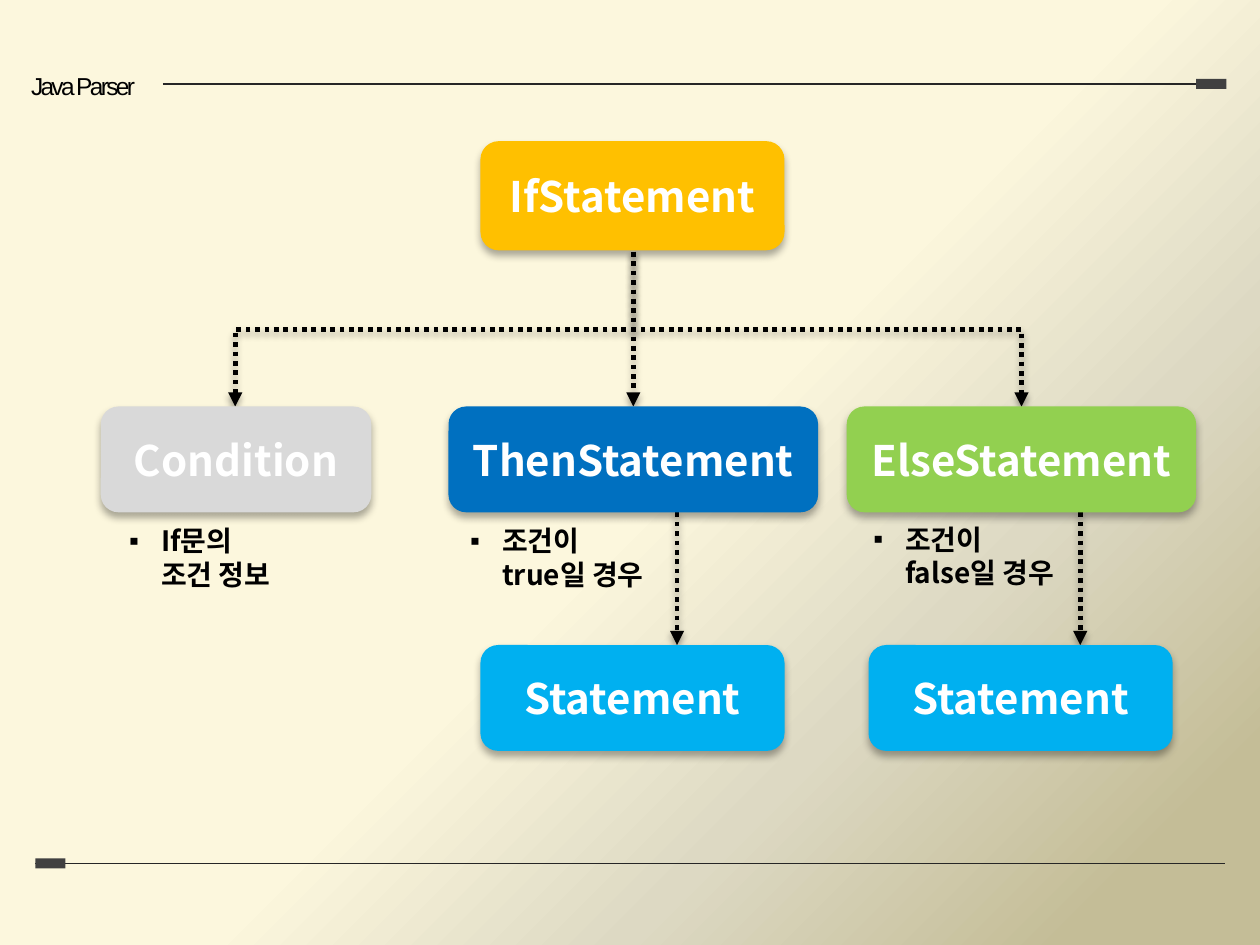
from dataclasses import dataclass

from lxml import etree
from pptx import Presentation
from pptx.dml.color import RGBColor
from pptx.enum.dml import MSO_LINE
from pptx.enum.shapes import MSO_CONNECTOR, MSO_SHAPE
from pptx.enum.text import MSO_ANCHOR, PP_ALIGN
from pptx.oxml import parse_xml
from pptx.oxml.ns import nsdecls, qn
from pptx.util import Inches, Pt

STRAIGHT, ELBOW = MSO_CONNECTOR.STRAIGHT, MSO_CONNECTOR.ELBOW
RECTANGLE, ROUNDED = MSO_SHAPE.RECTANGLE, MSO_SHAPE.ROUNDED_RECTANGLE
CENTER, MIDDLE, TOP = PP_ALIGN.CENTER, MSO_ANCHOR.MIDDLE, MSO_ANCHOR.TOP
DOTTED = MSO_LINE.ROUND_DOT


@dataclass(frozen=True)
class Theme:
    title_font: str = "Arial"
    body_font: str = "Noto Sans CJK KR"
    title_size: float = 10.5
    node_size: int = 18
    note_size: int = 12
    black: str = "000000"
    white: str = "FFFFFF"
    rule: str = "262626"
    tab: str = "404040"
    root: str = "FFC000"
    condition: str = "D9D9D9"
    then: str = "0070C0"
    otherwise: str = "92D050"
    statement: str = "00B0F0"
    backdrop: tuple = ((52, "FCF7DD"), (71, "DDD9C3"), (91, "C4BD97"))


THEME = Theme()


def style_run(run, font, size, color, bold=True):
    run.font.name = font
    run.font.size = Pt(size)
    run.font.bold = bold
    run.font.color.rgb = RGBColor.from_string(color)
    etree.SubElement(run.font._element, qn("a:ea"), typeface=font)


def add_drop_shadow(shape, opacity, blur, distance):
    """Give a shape or connector a black shadow straight below; lengths in points."""
    shape._element.spPr.append(parse_xml(
        f'<a:effectLst {nsdecls("a")}><a:outerShdw blurRad="{Pt(blur)}" dist="{Pt(distance)}" '
        f'dir="5400000" rotWithShape="0"><a:srgbClr val="{THEME.black}">'
        f'<a:alpha val="{opacity * 1000}"/></a:srgbClr></a:outerShdw></a:effectLst>'))


prs = Presentation()
prs.slide_width, prs.slide_height = Inches(7.5), Inches(7.5 * 3 / 4)
slide = prs.slides.add_slide(prs.slide_layouts[5])

# Background gradient, light at the top left corner
slide.background.fill.solid()
plain_fill = next(slide.element.iter(qn("a:solidFill")))
stops = "".join(f'<a:gs pos="{place * 1000}"><a:srgbClr val="{color}"/></a:gs>'
                for place, color in THEME.backdrop)
plain_fill.getparent().replace(plain_fill, parse_xml(
    f'<a:gradFill {nsdecls("a")} rotWithShape="1"><a:gsLst>{stops}</a:gsLst>'
    '<a:path path="circle"><a:fillToRect r="100000" b="100000"/></a:path></a:gradFill>'))

# Header and footer rules, each with a small tab at one end
for rule_left, rule_y, tab_left in ((0.21, 5.14, 0.21), (0.97, 0.5, 7.12)):
    rule = slide.shapes.add_connector(
        STRAIGHT, Inches(rule_left), Inches(rule_y), Inches(7.29), Inches(rule_y))
    rule.line.color.rgb = RGBColor.from_string(THEME.rule)
    rule.line.width = Pt(0.75)
    etree.SubElement(rule._element.spPr, qn("a:effectLst"))
    tab = slide.shapes.add_shape(
        RECTANGLE, Inches(tab_left), Inches(rule_y - 0.03), Inches(0.18), Inches(0.06))
    tab.shadow.inherit = False
    tab.fill.solid()
    tab.fill.fore_color.rgb = RGBColor.from_string(THEME.tab)
    tab.line.fill.background()

title = slide.shapes.title
title.left, title.top, title.width, title.height = (
    Inches(0.03), Inches(0.37), Inches(0.93), Inches(0.28))
title.text_frame.word_wrap = False
title.text_frame.vertical_anchor = TOP
heading = title.text_frame.paragraphs[0]
heading.alignment = CENTER
heading_run = heading.add_run()
heading_run.text = "Java Parser"
style_run(heading_run, THEME.title_font, THEME.title_size, THEME.black, bold=False)
heading_run.font._element.set("spc", "-110")

# Arrows: from x, from y, to x, to y
ROOT_X, ROOT_BOTTOM = 3.77, 1.5
BRANCH_TOP, BRANCH_BOTTOM, LEAF_TOP = 2.42, 3.05, 3.84
arrows = [(ROOT_X, ROOT_BOTTOM, x, BRANCH_TOP) for x in (1.4, ROOT_X, 6.08)]
arrows += [(x, BRANCH_BOTTOM, x, LEAF_TOP) for x in (4.03, 6.43)]
for x1, y1, x2, y2 in arrows:
    if x1 == x2:
        arrow = slide.shapes.add_connector(
            STRAIGHT, Inches(x1), Inches(y1), Inches(x2), Inches(y2))
    else:
        # An elbow leaves sideways, so lay it down and turn it about its centre
        center_x, center_y = (x1 + x2) / 2, (y1 + y2) / 2
        half_run, half_rise = (y2 - y1) / 2, abs(x2 - x1) / 2
        side = 1 if x2 > x1 else -1
        arrow = slide.shapes.add_connector(
            ELBOW,
            Inches(center_x + side * half_run), Inches(center_y - half_rise),
            Inches(center_x - side * half_run), Inches(center_y + half_rise))
        arrow.rotation = 270 if side > 0 else 90
    arrow.line.color.rgb = RGBColor.from_string(THEME.black)
    arrow.line.width = Pt(2)
    arrow.line.dash_style = DOTTED
    etree.SubElement(arrow.line._get_or_add_ln(), qn("a:tailEnd"), type="triangle")
    add_drop_shadow(arrow, 38, 3.1, 1.6)

# Tree nodes: label, left, top, width, height, color
nodes = (
    ("IfStatement", 2.86, 0.84, 1.81, 0.65, THEME.root),
    ("Condition", 0.6, BRANCH_TOP, 1.61, 0.63, THEME.condition),
    ("ThenStatement", 2.67, BRANCH_TOP, 2.2, 0.63, THEME.then),
    ("ElseStatement", 5.04, BRANCH_TOP, 2.08, 0.63, THEME.otherwise),
    ("Statement", 2.86, LEAF_TOP, 1.81, 0.63, THEME.statement),
    ("Statement", 5.17, LEAF_TOP, 1.81, 0.63, THEME.statement),
)
for label, left, top, width, height, color in nodes:
    node = slide.shapes.add_shape(
        ROUNDED, Inches(left), Inches(top), Inches(width), Inches(height))
    node.fill.solid()
    node.fill.fore_color.rgb = RGBColor.from_string(color)
    node.line.fill.background()
    add_drop_shadow(node, 32, 3.5, 2.2)
    node.text_frame.word_wrap = False
    node.text_frame.vertical_anchor = MIDDLE
    caption = node.text_frame.paragraphs[0]
    caption.alignment = CENTER
    caption_run = caption.add_run()
    caption_run.text = label
    style_run(caption_run, THEME.body_font, THEME.node_size, THEME.white)

# Bulleted notes below the branches: left, top, width, lines
notes = (
    (0.67, 3.07, 1.12, ("If문의", "조건 정보")),
    (2.7, 3.07, 1.28, ("조건이", "true일 경우")),
    (5.1, 3.06, 1.33, ("조건이", "false일 경우")),
)
for left, top, width, lines in notes:
    note = slide.shapes.add_textbox(Inches(left), Inches(top), Inches(width), Inches(0.5))
    note.text_frame.word_wrap = False
    remark = note.text_frame.paragraphs[0]
    remark_format = remark._p.get_or_add_pPr()
    remark_format.set("marL", str(Inches(0.19)))
    remark_format.set("indent", str(-Inches(0.19)))
    etree.SubElement(remark_format, qn("a:buFont"), typeface=THEME.title_font)
    etree.SubElement(remark_format, qn("a:buChar"), char="▪")
    for position, line in enumerate(lines):
        if position:
            remark.add_line_break()
        remark_run = remark.add_run()
        remark_run.text = line
        style_run(remark_run, THEME.body_font, THEME.note_size, THEME.black)

prs.save("out.pptx")
